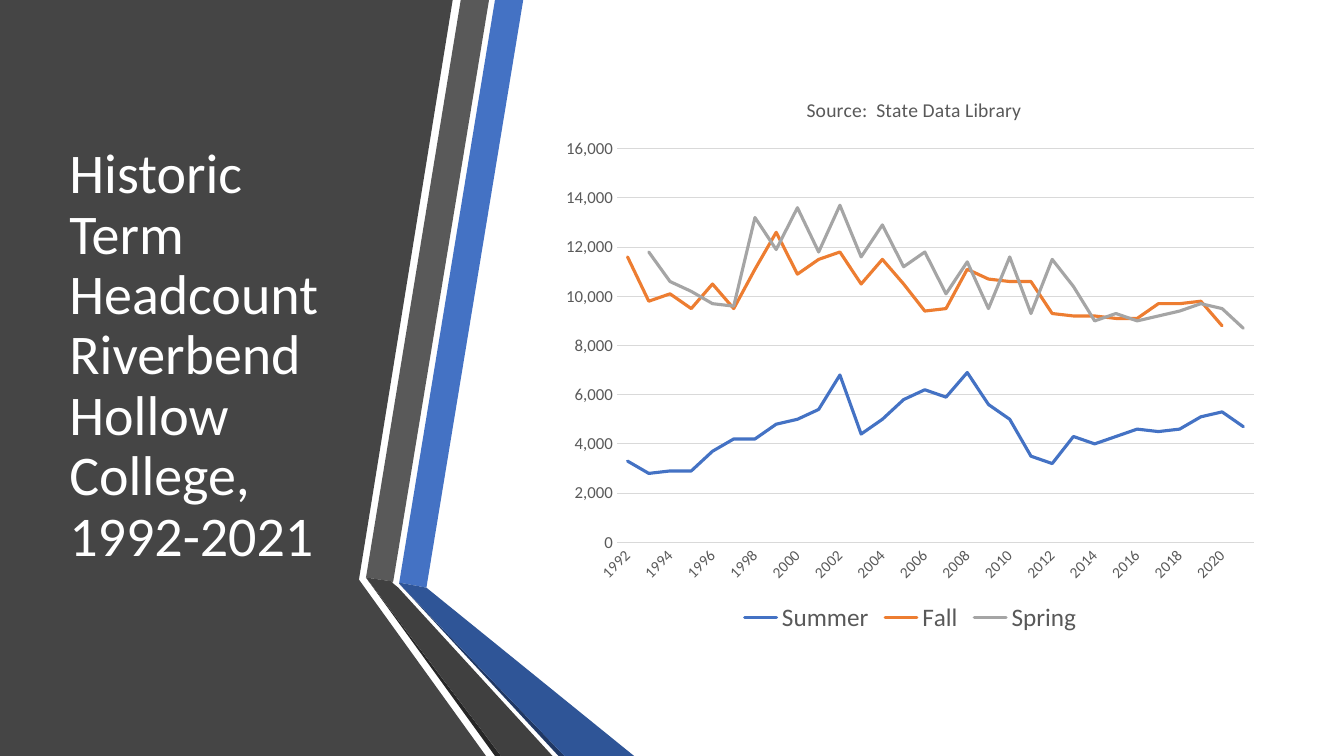
import pptx
import pptx.chart.data
import pptx.dml.color
import pptx.enum.chart
import pptx.enum.text
import pptx.oxml
import pptx.oxml.ns
import pptx.util
from pptx.util import Inches

FONT = "Calibri"
TEXT_GREY = "595959"
LINE_GREY = "D9D9D9"

PANEL = [(0, 0), (4.49, 0), (3.56, 5.75), (4.82, 7.5), (0, 7.5)]
RIBBONS = [
    ("4472C4", [(3.96, 5.78), (4.23, 5.83), (5.19, 0), (4.91, 0)]),
    ("595959", [(4.85, 0), (4.57, 0), (3.63, 5.73), (3.9, 5.77)]),
    ("262626", [(3.63, 5.73), (4.91, 7.5), (4.97, 7.5)]),
    ("203864", [(3.96, 5.79), (5.54, 7.5), (5.6, 7.5)]),
    ("2F5597", [(3.96, 5.79), (5.6, 7.5), (6.29, 7.5), (4.23, 5.83), (3.96, 5.78)]),
    ("404040", [(5.48, 7.5), (3.95, 5.83), (3.89, 5.78), (3.9, 5.77),
                (3.63, 5.73), (4.97, 7.5)]),
]

YEARS = [str(year) for year in range(1992, 2022)]
HEADCOUNTS = [
    ("Summer", "4472C4",
     [3300, 2800, 2900, 2900, 3700, 4200, 4200, 4800, 5000, 5400,
      6800, 4400, 5000, 5800, 6200, 5900, 6900, 5600, 5000, 3500,
      3200, 4300, 4000, 4300, 4600, 4500, 4600, 5100, 5300, 4700]),
    ("Fall", "ED7D31",
     [11600, 9800, 10100, 9500, 10500, 9500, 11100, 12600, 10900, 11500,
      11800, 10500, 11500, 10500, 9400, 9500, 11100, 10700, 10600, 10600,
      9300, 9200, 9200, 9100, 9100, 9700, 9700, 9800, 8800, None]),
    ("Spring", "A5A5A5",
     [None, 11800, 10600, 10200, 9700, 9600, 13200, 11900, 13600, 11800,
      13700, 11600, 12900, 11200, 11800, 10100, 11400, 9500, 11600, 9300,
      11500, 10400, 9000, 9300, 9000, 9200, 9400, 9700, 9500, 8700]),
]


def color(value):
    return pptx.dml.color.RGBColor.from_string(value)


def style_font(font, size, value):
    font.name = FONT
    font.size = pptx.util.Pt(size)
    font.bold = False
    font.color.rgb = color(value)


def style_line(line, width, value):
    line.width = pptx.util.Pt(width)
    line.color.rgb = color(value)


def add_polygon(page, box, points, fill):
    left, top = box[:2]
    corners = [(Inches(left + x), Inches(top + y)) for x, y in points]
    builder = page.shapes.build_freeform(*corners[0])
    builder.add_line_segments(corners[1:], close=True)
    shape = builder.convert_to_shape()
    shape.shadow.inherit = False
    shape.fill.solid()
    shape.fill.fore_color.rgb = color(fill)
    shape.line.fill.background()


def add_backdrop(page, box):
    add_polygon(page, box, PANEL, "454545")
    for fill, points in RIBBONS:
        add_polygon(page, box, points, fill)


def add_title(page, box):
    frame = page.shapes.add_textbox(*map(Inches, box)).text_frame
    frame.word_wrap = True
    frame.vertical_anchor = pptx.enum.text.MSO_ANCHOR.MIDDLE
    para = frame.paragraphs[0]
    para.line_spacing = 0.9
    for index, words in enumerate(("Historic Term Headcount",
                                   "Riverbend Hollow College, 1992-2021")):
        if index:
            para.add_line_break()
        span = para.add_run()
        span.text = words
        style_font(span.font, 40, "FFFFFF")


def set_layout(parent, position, **fractions):
    for old in parent.findall(pptx.oxml.ns.qn("c:layout")):
        parent.remove(old)
    target = '<c:layoutTarget val="inner"/>' if "w" in fractions else ""
    modes = "".join(f'<c:{key}Mode val="edge"/>' for key in ("x", "y"))
    values = "".join(f'<c:{key} val="{value}"/>' for key, value in fractions.items())
    parent.insert(position, pptx.oxml.parse_xml(
        f'<c:layout {pptx.oxml.ns.nsdecls("c")}><c:manualLayout>'
        f"{target}{modes}{values}</c:manualLayout></c:layout>"))


def style_year_axis(axis):
    axis.major_tick_mark = pptx.enum.chart.XL_TICK_MARK.NONE
    style_font(axis.tick_labels.font, 11, TEXT_GREY)
    style_line(axis.format.line, 0.75, LINE_GREY)
    element = axis._element
    element.find(".//" + pptx.oxml.ns.qn("a:bodyPr")).set("rot", "-2700000")
    skip = pptx.oxml.parse_xml(
        f'<c:tickLblSkip {pptx.oxml.ns.nsdecls("c")} val="2"/>')
    element.find(pptx.oxml.ns.qn("c:noMultiLvlLbl")).addprevious(skip)


def style_count_axis(axis):
    axis.minimum_scale = 0
    axis.maximum_scale = 16000
    axis.major_unit = 2000
    axis.major_tick_mark = pptx.enum.chart.XL_TICK_MARK.NONE
    axis.tick_labels.number_format = "#,##0"
    axis.tick_labels.number_format_is_linked = False
    style_font(axis.tick_labels.font, 12, TEXT_GREY)
    axis.format.line.fill.background()
    style_line(axis.major_gridlines.format.line, 0.75, LINE_GREY)


def add_headcount_chart(page, box):
    data = pptx.chart.data.CategoryChartData(number_format="#,##0")
    data.categories = YEARS
    for name, _, values in HEADCOUNTS:
        data.add_series(name, values)
    chart = page.shapes.add_chart(
        pptx.enum.chart.XL_CHART_TYPE.LINE, *map(Inches, box), data).chart
    style_font(chart.font, 10, "000000")

    chart.has_title = True
    span = chart.chart_title.text_frame.paragraphs[0].add_run()
    span.text = "Source:  State Data Library"
    style_font(span.font, 14, TEXT_GREY)
    set_layout(chart.chart_title._element, 1, x=0.35, y=0.03)

    chart.has_legend = True
    chart.legend.position = pptx.enum.chart.XL_LEGEND_POSITION.BOTTOM
    chart.legend.include_in_layout = False
    style_font(chart.legend.font, 18, TEXT_GREY)

    style_year_axis(chart.category_axis)
    style_count_axis(chart.value_axis)
    plot = chart.plots[0]
    plot.vary_by_categories = False
    for series, (_, stroke, _) in zip(plot.series, HEADCOUNTS):
        series.smooth = False
        series.marker.style = pptx.enum.chart.XL_MARKER_STYLE.NONE
        style_line(series.format.line, 2.25, stroke)
        series._element.find(".//" + pptx.oxml.ns.qn("a:ln")).set("cap", "rnd")
    plot_area = chart._chartSpace.find(".//" + pptx.oxml.ns.qn("c:plotArea"))
    set_layout(plot_area, 0, x=0.09, y=0.13, w=0.89, h=0.7)


def main():
    deck = pptx.Presentation()
    deck.slide_width = Inches(13.33)
    deck.slide_height = Inches(7.5)
    page = deck.slides.add_slide(deck.slide_layouts[6])
    add_backdrop(page, (0, 0, 6.29, 7.5))
    add_title(page, (0.59, 0.75, 3.04, 5.58))
    add_headcount_chart(page, (5.48, 0.75, 7.1, 5.58))
    deck.save("out.pptx")


if __name__ == "__main__":
    main()
